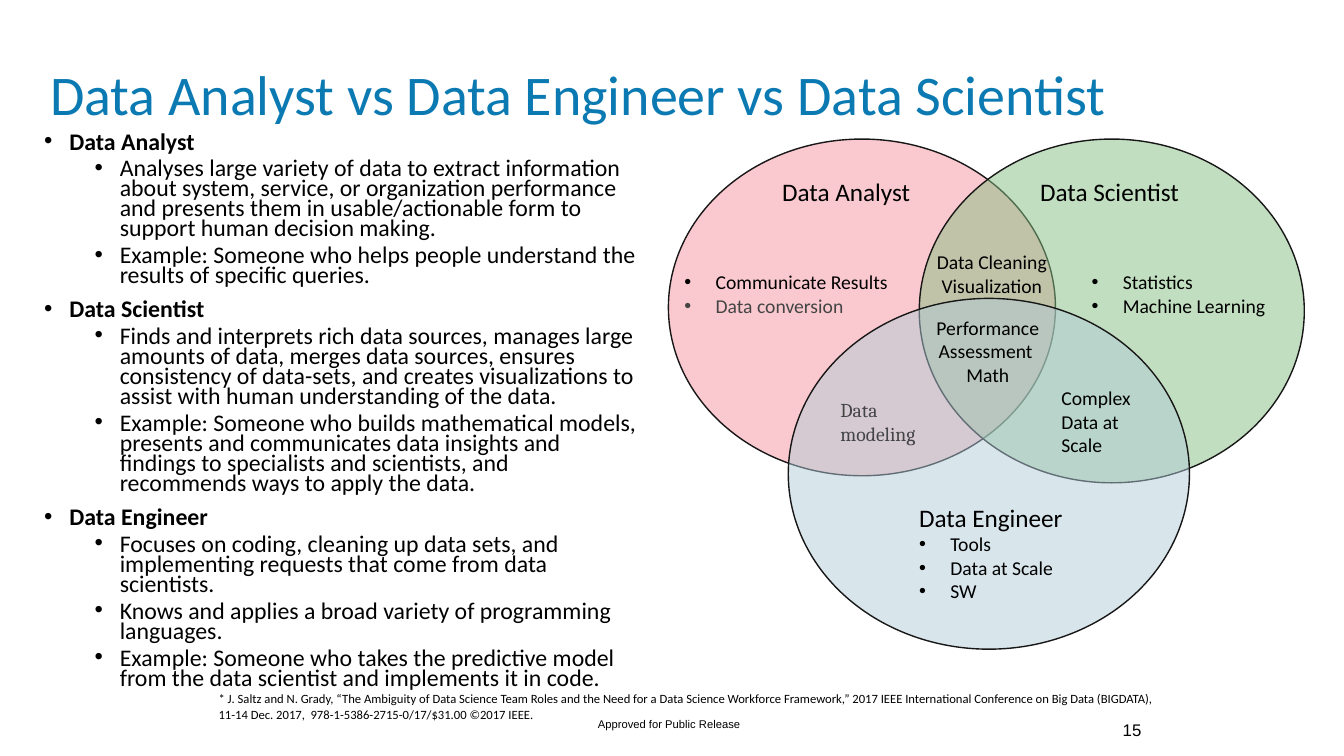
"""Build a slide that compares three data roles with bullets and a Venn diagram."""
from dataclasses import dataclass

from lxml.etree import SubElement
from pptx import Presentation
from pptx.dml.color import RGBColor
from pptx.enum.shapes import MSO_SHAPE as Preset
from pptx.enum.text import MSO_ANCHOR as Anchor, PP_ALIGN as Align
from pptx.oxml.ns import qn
from pptx.util import Inches, Pt


@dataclass(frozen=True)
class Style:
    size: float
    color: str = "000000"
    font: str = "Calibri"
    bold: bool = False
    align: Align = Align.LEFT
    spacing: float = 1.0
    before: float = 0
    margin: float = 0
    hang: float = 0


class Theme:
    outline = "181717"
    outline_width = 1
    title = Style(40, "0C7AB2", spacing=0.9)
    role = Style(17, bold=True, spacing=0.7, before=10, margin=0.25, hang=0.25)
    detail = Style(17, spacing=0.7, before=5, margin=0.75, hang=0.25)
    cite = Style(9)
    heading = Style(18)
    skill = Style(14, margin=0.31, hang=0.31)
    muted_skill = Style(14, "444444", margin=0.31, hang=0.31)
    overlap = Style(14)
    centered = Style(14, align=Align.CENTER)
    serif = Style(14, "444444", "Cambria")
    footer = Style(8, font="Arial")
    number = Style(12, font="Arial")


WIDTH, HEIGHT = 13.33, 7.5

TITLE = "Data Analyst vs Data Engineer vs Data Scientist"
ROLES = {
    "Data Analyst": [
        "Analyses large variety of data to extract information about system, service, or organization "
        "performance and presents them in usable/actionable form to support human decision making.",
        "Example: Someone who helps people understand the results of specific queries.",
    ],
    "Data Scientist": [
        "Finds and interprets rich data sources, manages large amounts of data, merges data sources, ensures "
        "consistency of data-sets, and creates visualizations to assist with human understanding of the data.",
        "Example: Someone who builds mathematical models, presents and communicates data insights and "
        "findings to specialists and scientists, and recommends ways to apply the data.",
    ],
    "Data Engineer": [
        "Focuses on coding, cleaning up data sets, and implementing requests that come from data scientists.",
        "Knows and applies a broad variety of programming languages.",
        "Example: Someone who takes the predictive model from the data scientist and implements it in code.",
    ],
}
CITATION = [
    "* J. Saltz and N. Grady, “The Ambiguity of Data Science Team Roles and the Need for a Data Science "
    "Workforce Framework,” 2017 IEEE International Conference on Big Data (BIGDATA),",
    "11-14 Dec. 2017,  978-1-5386-2715-0/17/$31.00 ©2017 IEEE.",
]

# Places are left, top, width and height in percent of the slide.
CIRCLES = [
    ((49.73, 18.4, 28.8, 44.53), "F695A0", 50),
    ((68.4, 18.4, 28.65, 45.47), "87BF83", 50),
    ((58.65, 39.47, 29.85, 46.4), "B0CAD7", 49),
]
LABELS = [
    ((57.45, 22.67, 12.98, 5.33), [(Theme.heading, "Data Analyst")]),
    ((76.65, 22.67, 14.18, 5.33), [(Theme.heading, "Data Scientist")]),
    ((67.65, 65.73, 14.03, 14.8), [(Theme.heading, "Data Engineer"), (Theme.skill, "Tools"),
                                   (Theme.skill, "Data at Scale"), (Theme.skill, "SW")]),
    ((68.33, 41.07, 10.35, 10.8), [(Theme.centered, "Performance Assessment "), (Theme.centered, "Math")]),
    ((68.85, 32.4, 9.9, 10.8), [(Theme.centered, "Data Cleaning"), (Theme.centered, "Visualization")]),
    ((61.8, 52, 8.85, 7.6), [(Theme.serif, "Data modeling")]),
    ((78.23, 50.4, 8.93, 10.8), [(Theme.overlap, "Complex Data at Scale")]),
    ((50.18, 35.07, 19.8, 7.6), [(Theme.skill, "Communicate Results"), (Theme.muted_skill, "Data conversion")]),
    ((80.48, 35.07, 16.05, 7.6), [(Theme.skill, "Statistics"), (Theme.skill, "Machine Learning")]),
]


def locate(place):
    left, top, width, height = (share / 100 for share in place)
    return Inches(left * WIDTH), Inches(top * HEIGHT), Inches(width * WIDTH), Inches(height * HEIGHT)


def add_bullet(para, style):
    props = para._p.get_or_add_pPr()
    props.set("marL", str(Inches(style.margin)))
    props.set("indent", str(-Inches(style.hang)))
    SubElement(props, qn("a:buFont"), typeface="Arial")
    SubElement(props, qn("a:buChar"), char="•")


def add_text(page, place, lines, wrap=True, anchor=Anchor.TOP):
    frame = page.shapes.add_textbox(*locate(place)).text_frame
    frame.word_wrap = wrap
    frame.vertical_anchor = anchor
    frame.text = "\n".join(text for _, text in lines)
    for index, (para, (style, _)) in enumerate(zip(frame.paragraphs, lines)):
        para.alignment = style.align
        para.line_spacing = style.spacing
        para.space_before = Pt(style.before if index else 0)
        if style.hang:
            add_bullet(para, style)
        for span in para.runs:
            span.font.name = style.font
            span.font.size = Pt(style.size)
            span.font.bold = style.bold
            span.font.color.rgb = RGBColor.from_string(style.color)


def add_circle(page, place, color, opacity):
    circle = page.shapes.add_shape(Preset.OVAL, *locate(place))
    circle.shadow.inherit = False
    circle.fill.solid()
    circle.fill.fore_color.rgb = RGBColor.from_string(color)
    tint = circle.fill._xPr.find(qn("a:solidFill"))[0]
    SubElement(tint, qn("a:alpha"), val=str(opacity * 1000))
    circle.line.color.rgb = RGBColor.from_string(Theme.outline)
    circle.line.width = Pt(Theme.outline_width)


def main():
    deck = Presentation()
    deck.slide_width, deck.slide_height = Inches(WIDTH), Inches(HEIGHT)
    page = deck.slides.add_slide(deck.slide_layouts[6])

    add_text(page, (43.74, 94.27, 12.45, 3.2), [(Theme.footer, "Approved for Public Release")], wrap=False)
    add_text(page, (3, 6.67, 86.25, 12.53), [(Theme.title, TITLE)], anchor=Anchor.MIDDLE)
    bullets = []
    for role, details in ROLES.items():
        bullets.append((Theme.role, role))
        bullets.extend((Theme.detail, detail) for detail in details)
    add_text(page, (2.55, 17.07, 45.75, 76.27), bullets)
    add_text(page, (15.53, 90.8, 79.95, 5.33), [(Theme.cite, line) for line in CITATION])
    for circle in CIRCLES:
        add_circle(page, *circle)
    for place, lines in LABELS:
        add_text(page, place, lines)
    add_text(page, (82.8, 94.53, 3.45, 5.33), [(Theme.number, "15")])
    deck.save("out.pptx")


if __name__ == "__main__":
    main()
